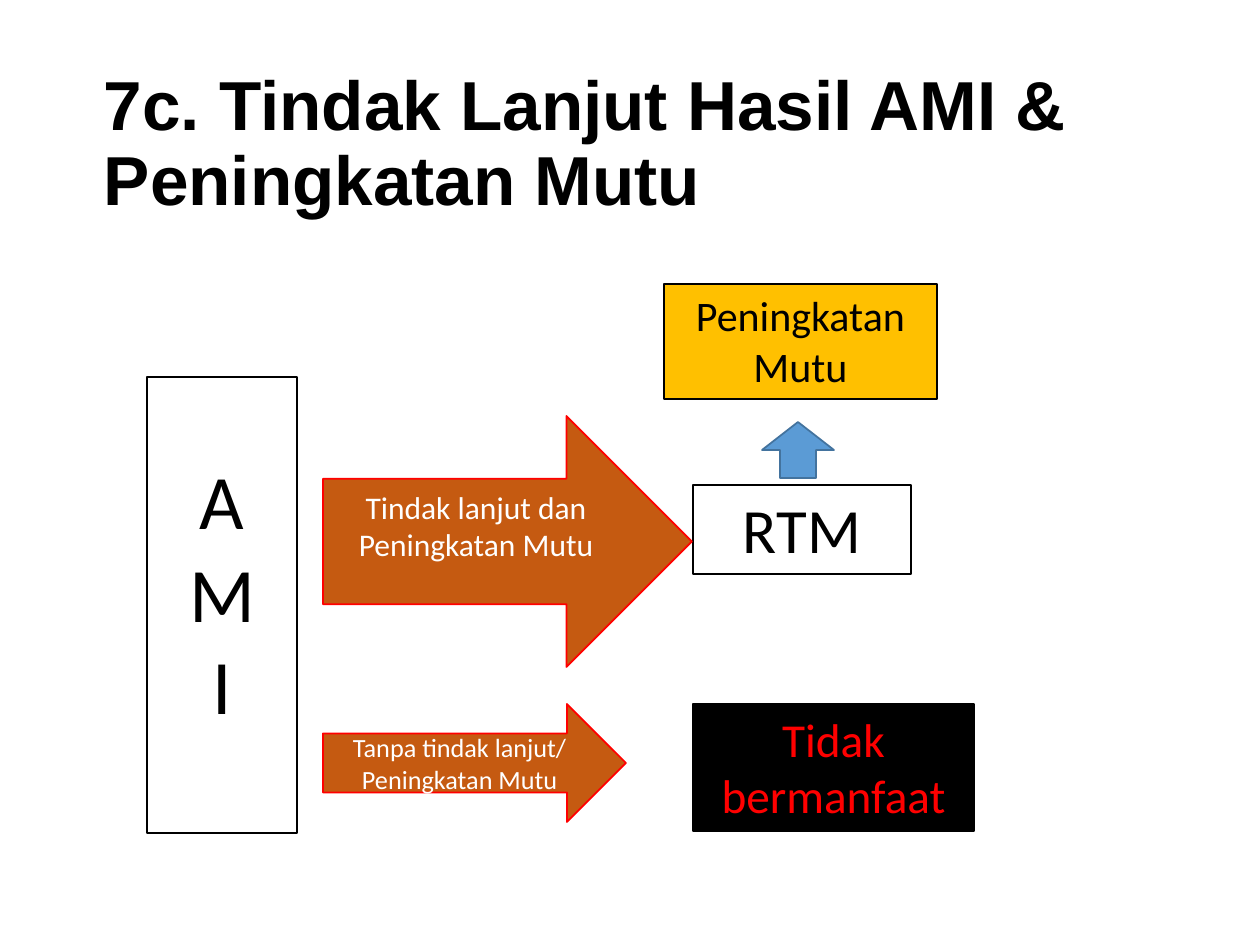
"""Build the slide on follow-up of AMI results and quality improvement."""
from dataclasses import dataclass

from pptx import Presentation
from pptx.dml.color import RGBColor
from pptx.enum.shapes import MSO_SHAPE as Preset
from pptx.enum.text import MSO_ANCHOR as Anchor, PP_ALIGN as Align
from pptx.util import Emu, Pt

PX = 914400 // 126


@dataclass(frozen=True)
class Theme:
    black: str = "000000"
    white: str = "FFFFFF"
    red: str = "FF0000"
    orange: str = "C55A11"
    gold: str = "FFC000"
    blue: str = "5B9BD5"
    dark_blue: str = "43739E"
    heading_font: str = "Arial"
    body_font: str = "Calibri"
    title: float = 39.6
    audit: int = 44
    review: int = 36
    useless: int = 27
    improvement: int = 24
    follow_up: int = 18
    no_follow_up: int = 15
    thin: float = 0.75
    medium: int = 1


THEME = Theme()
SIDE, EDGE = 13, 6

TITLE = ["7c. Tindak Lanjut Hasil AMI & Peningkatan Mutu"]
TITLE_BOX = (95, 66, 1023, 88)

BOXES = [
    dict(lines=["A", "M", "I"], box=(147, 377, 150, 456), size=THEME.audit,
         color=THEME.black, fill=None, top=76),
    dict(lines=["Peningkatan Mutu"], box=(664, 284, 273, 115), size=THEME.improvement,
         color=THEME.black, fill=THEME.gold),
    dict(lines=["RTM"], box=(693, 485, 218, 89), size=THEME.review,
         color=THEME.black, fill=None),
    dict(lines=["Tidak bermanfaat"], box=(693, 704, 281, 127), size=THEME.useless,
         color=THEME.red, fill=THEME.black),
]
ARROWS = [
    dict(lines=["Tanpa tindak lanjut/", "Peningkatan Mutu"], box=(323, 704, 303, 118),
         size=THEME.no_follow_up),
    dict(lines=["Tindak lanjut dan Peningkatan Mutu"], box=(323, 416, 369, 251),
         size=THEME.follow_up, bottom=38),
]
UP_ARROW_BOX = (762, 422, 72, 56)


def to_emu(lengths):
    return [Emu(length * PX) for length in lengths]


def write(shape, lines, *, size, color, font=THEME.body_font, bold=False,
          align=Align.CENTER, anchor=Anchor.TOP, side=SIDE, top=EDGE, bottom=EDGE,
          spacing=1.0):
    frame = shape.text_frame
    frame.word_wrap = True
    frame.vertical_anchor = anchor
    frame.margin_left = frame.margin_right = Emu(side * PX)
    frame.margin_top, frame.margin_bottom = to_emu((top, bottom))
    for index, line in enumerate(lines):
        paragraph = frame.paragraphs[0] if index == 0 else frame.add_paragraph()
        paragraph.alignment = align
        paragraph.line_spacing = spacing
        run = paragraph.add_run()
        run.text = line
        run.font.name = font
        run.font.size = Pt(size)
        run.font.bold = bold
        run.font.color.rgb = RGBColor.from_string(color)


def add_preset(slide, preset, box, *, fill, line, width):
    shape = slide.shapes.add_shape(preset, *to_emu(box))
    shape.shadow.inherit = False
    if fill:
        shape.fill.solid()
        shape.fill.fore_color.rgb = RGBColor.from_string(fill)
    else:
        shape.fill.background()
    shape.line.color.rgb = RGBColor.from_string(line)
    shape.line.width = Pt(width)
    return shape


def main():
    presentation = Presentation()
    presentation.slide_width, presentation.slide_height = to_emu((1260, 945))
    slide = presentation.slides.add_slide(presentation.slide_layouts[6])

    title = slide.shapes.add_textbox(*to_emu(TITLE_BOX))
    write(title, TITLE, size=THEME.title, color=THEME.black, font=THEME.heading_font,
          bold=True, align=Align.LEFT, side=9, top=5, bottom=5, spacing=0.9)

    for item in BOXES:
        shape = add_preset(slide, Preset.RECTANGLE, item["box"], fill=item["fill"],
                           line=THEME.black, width=THEME.thin)
        write(shape, item["lines"], size=item["size"], color=item["color"],
              top=item.get("top", EDGE))

    for item in ARROWS:
        shape = add_preset(slide, Preset.RIGHT_ARROW, item["box"], fill=THEME.orange,
                           line=THEME.red, width=THEME.medium)
        write(shape, item["lines"], size=item["size"], color=THEME.white,
              anchor=Anchor.MIDDLE, bottom=item.get("bottom", EDGE))

    add_preset(slide, Preset.UP_ARROW, UP_ARROW_BOX, fill=THEME.blue,
               line=THEME.dark_blue, width=THEME.medium)
    presentation.save("out.pptx")


if __name__ == "__main__":
    main()
